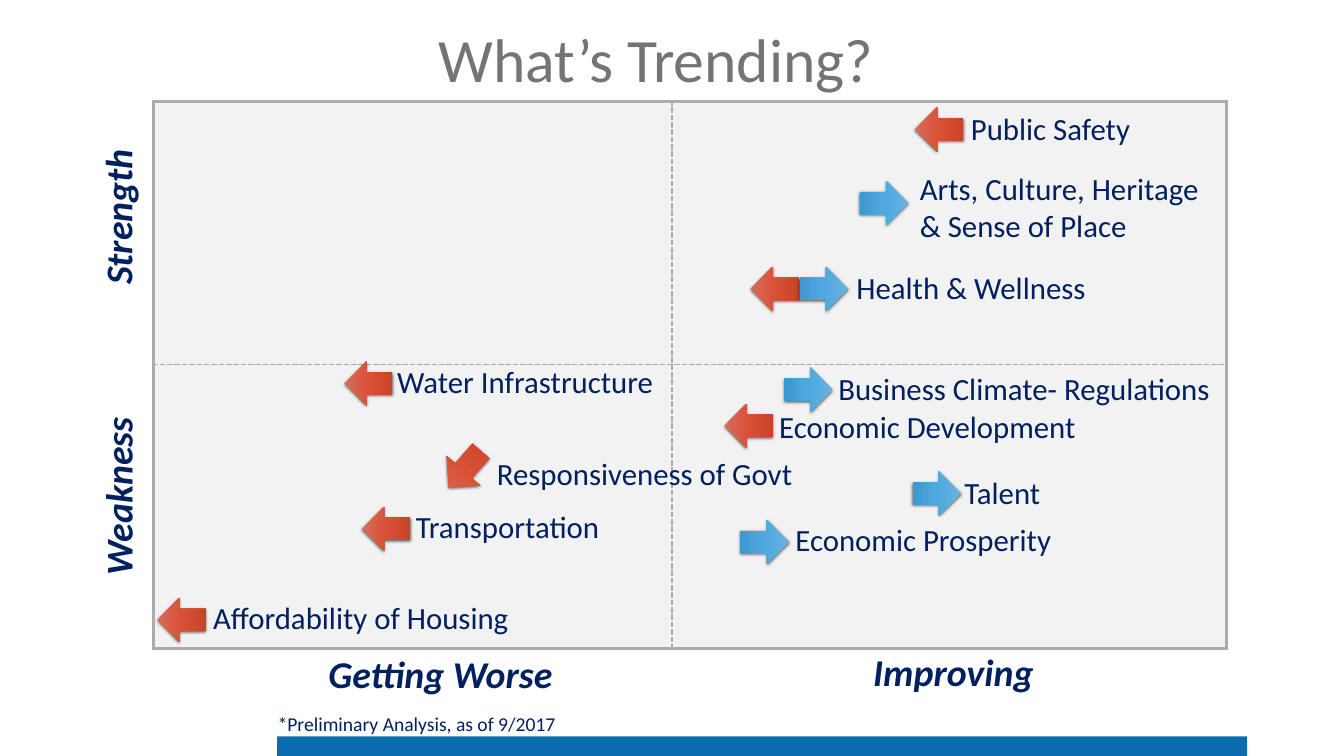
from dataclasses import dataclass

from lxml import etree
from pptx import Presentation
from pptx.dml.color import RGBColor
from pptx.enum.shapes import MSO_SHAPE
from pptx.enum.text import MSO_ANCHOR, MSO_AUTO_SIZE, PP_ALIGN
from pptx.oxml import parse_xml
from pptx.oxml.ns import nsdecls, qn
from pptx.util import Cm, Pt

RECTANGLE, UP_ARROW = MSO_SHAPE.RECTANGLE, MSO_SHAPE.UP_ARROW
LEFT, CENTER = PP_ALIGN.LEFT, PP_ALIGN.CENTER
MIDDLE = MSO_ANCHOR.MIDDLE
FIT_SHAPE = MSO_AUTO_SIZE.SHAPE_TO_FIT_TEXT

FONT = "Calibri"
COLORS = {"title": "737572", "text": "002060", "bar": "0B6BAF",
          "cell": "F2F2F2", "border": "ABACAA"}
WORSE = ("D76D5D", "D85136", "C94327")
BETTER = ("6CB1DE", "4DA9E0", "3D98CE")
ARROW_W, ARROW_H = 2.24, 2.44
COLUMNS, ROWS = (26.11, 27.94), (13.26, 14.3)


@dataclass
class Label:
    text: str
    left: float
    top: float
    width: float
    height: float = 2.13
    size: int = 44
    align: PP_ALIGN = LEFT
    strong: bool = False
    rotation: float = 0


@dataclass
class Arrow:
    left: float
    top: float
    rotation: float = 270
    gradient: tuple = WORSE


def axis_label(text: str, left: float, top: float, width: float, rotation: float = 0) -> Label:
    return Label(text, left, top, width, 2.57, 54, CENTER, True, rotation)


def better(left: float, top: float) -> Arrow:
    return Arrow(left, top, 90, BETTER)


AXES = [
    axis_label("Strength", 0.76, 9.65, 10.34, 270),
    axis_label("Weakness", 0.15, 23.72, 11.58, 270),
    axis_label("Getting Worse", 7.75, 32.66, 28.88),
    axis_label("Improving", 34.77, 32.56, 26.54),
]
TOPICS = [
    (Label("Public Safety", 48.67, 5.38, 11.66), [Arrow(46.2, 5.31)]),
    (Label("Arts, Culture, Heritage & Sense of Place", 46.1, 8.43, 15.7, 4.01),
     [better(43.43, 9.02)]),
    (Label("Health & Wellness", 42.9, 13.41, 16.79),
     [Arrow(37.92, 13.34), better(40.39, 13.34)]),
    (Label("Water Infrastructure", 19.76, 18.14, 16.76), [Arrow(17.45, 18.11)]),
    (Label("Business Climate- Regulations", 41.99, 18.52, 20.78), [better(39.62, 18.42)]),
    (Label("Economic Development", 39.01, 20.42, 19.25), [Arrow(36.6, 20.24)]),
    (Label("Responsiveness of Govt", 24.79, 22.78, 16.92), [Arrow(22.3, 22.43, 221.5)]),
    (Label("Talent", 48.34, 23.75, 5.69), [better(46.08, 23.65)]),
    (Label("Transportation", 20.7, 25.48, 12.75), [Arrow(18.34, 25.43)]),
    (Label("Economic Prosperity", 39.83, 26.14, 20.78), [better(37.41, 26.11)]),
    (Label("Affordability of Housing", 10.49, 30.05, 19.08), [Arrow(8.03, 30.02)]),
]
FOOTNOTE = Label("*Preliminary Analysis, as of 9/2017", 13.74, 35.74, 36.6, 1.45, 28)


def rgb(name: str) -> RGBColor:
    return RGBColor.from_string(COLORS[name])


def format_text(p, size: int, color: str, align: PP_ALIGN, strong: bool = False) -> None:
    p.alignment = align
    font = p.runs[0].font
    font.name, font.size = FONT, Pt(size)
    font.bold = font.italic = strong
    font.color.rgb = rgb(color)


def add_title(s, text: str) -> None:
    sp = s.shapes.title
    sp.left, sp.top, sp.width, sp.height = Cm(20.22), Cm(1.6), Cm(27.08), Cm(3.15)
    tf = sp.text_frame
    tf.text = text
    tf.word_wrap = True
    tf.vertical_anchor = MIDDLE
    tf.margin_left, tf.margin_right = Cm(0.51), Cm(1.91)
    tf.margin_top = tf.margin_bottom = Cm(0.25)
    p = tf.paragraphs[0]
    p.line_spacing = 0.9
    format_text(p, 88, "title", CENTER)


def add_label(s, label: Label) -> None:
    sp = s.shapes.add_textbox(Cm(label.left), Cm(label.top), Cm(label.width), Cm(label.height))
    sp.rotation = label.rotation
    tf = sp.text_frame
    tf.text = label.text
    tf.word_wrap = True
    tf.auto_size = FIT_SHAPE
    format_text(tf.paragraphs[0], label.size, "text", label.align, label.strong)


def add_arrow(s, arrow: Arrow) -> None:
    """Draw an arrow with a three-stop gradient and a soft shadow."""
    sp = s.shapes.add_shape(UP_ARROW, Cm(arrow.left), Cm(arrow.top), Cm(ARROW_W), Cm(ARROW_H))
    sp.rotation = arrow.rotation
    sp.line.fill.background()
    stops = "".join(f'<a:gs pos="{i * 50000}"><a:srgbClr val="{color}"/></a:gs>'
                    for i, color in enumerate(arrow.gradient))
    sp_pr = sp.element.spPr
    sp_pr.find(qn("a:prstGeom")).addnext(parse_xml(
        f'<a:gradFill {nsdecls("a")} rotWithShape="1"><a:gsLst>{stops}</a:gsLst>'
        '<a:lin ang="5400000" scaled="0"/></a:gradFill>'))
    sp_pr.append(parse_xml(
        f'<a:effectLst {nsdecls("a")}><a:outerShdw blurRad="57150" dist="19050" '
        'dir="5400000" algn="ctr" rotWithShape="0"><a:srgbClr val="000000">'
        '<a:alpha val="63000"/></a:srgbClr></a:outerShdw></a:effectLst>'))


def set_border(cell, side: str, outer: bool) -> None:
    ln = etree.SubElement(cell._tc.get_or_add_tcPr(), qn(f"a:ln{side}"),
                          w=str(Pt(4.5 if outer else 2.25)))
    fill = etree.SubElement(ln, qn("a:solidFill"))
    etree.SubElement(fill, qn("a:srgbClr"), val=COLORS["border"])
    etree.SubElement(ln, qn("a:prstDash"), val="solid" if outer else "sysDash")


def add_quadrants(s) -> None:
    table = s.shapes.add_table(2, 2, Cm(7.75), Cm(5.11), Cm(sum(COLUMNS)), Cm(sum(ROWS))).table
    table.first_row = table.horz_banding = False
    for i in range(2):
        table.columns[i].width = Cm(COLUMNS[i])
        table.rows[i].height = Cm(ROWS[i])
    for row in range(2):
        for col in range(2):
            cell = table.cell(row, col)
            for side, outer in (("L", col == 0), ("R", col == 1),
                                ("T", row == 0), ("B", row == 1)):
                set_border(cell, side, outer)
            cell.fill.solid()
            cell.fill.fore_color.rgb = rgb("cell")


def add_bar(s) -> None:
    sp = s.shapes.add_shape(RECTANGLE, Cm(13.97), Cm(37.11), Cm(48.87), Cm(0.99))
    sp.shadow.inherit = False
    sp.fill.solid()
    sp.fill.fore_color.rgb = rgb("bar")
    sp.line.fill.background()


def main() -> None:
    prs = Presentation()
    prs.slide_width, prs.slide_height = Cm(67.72), Cm(38.1)
    s = prs.slides.add_slide(prs.slide_layouts[5])
    add_bar(s)
    add_title(s, "What’s Trending?")
    add_quadrants(s)
    for label in AXES + [FOOTNOTE]:
        add_label(s, label)
    for label, arrows in TOPICS:
        add_label(s, label)
        for arrow in arrows:
            add_arrow(s, arrow)
    prs.save("out.pptx")


if __name__ == "__main__":
    main()
